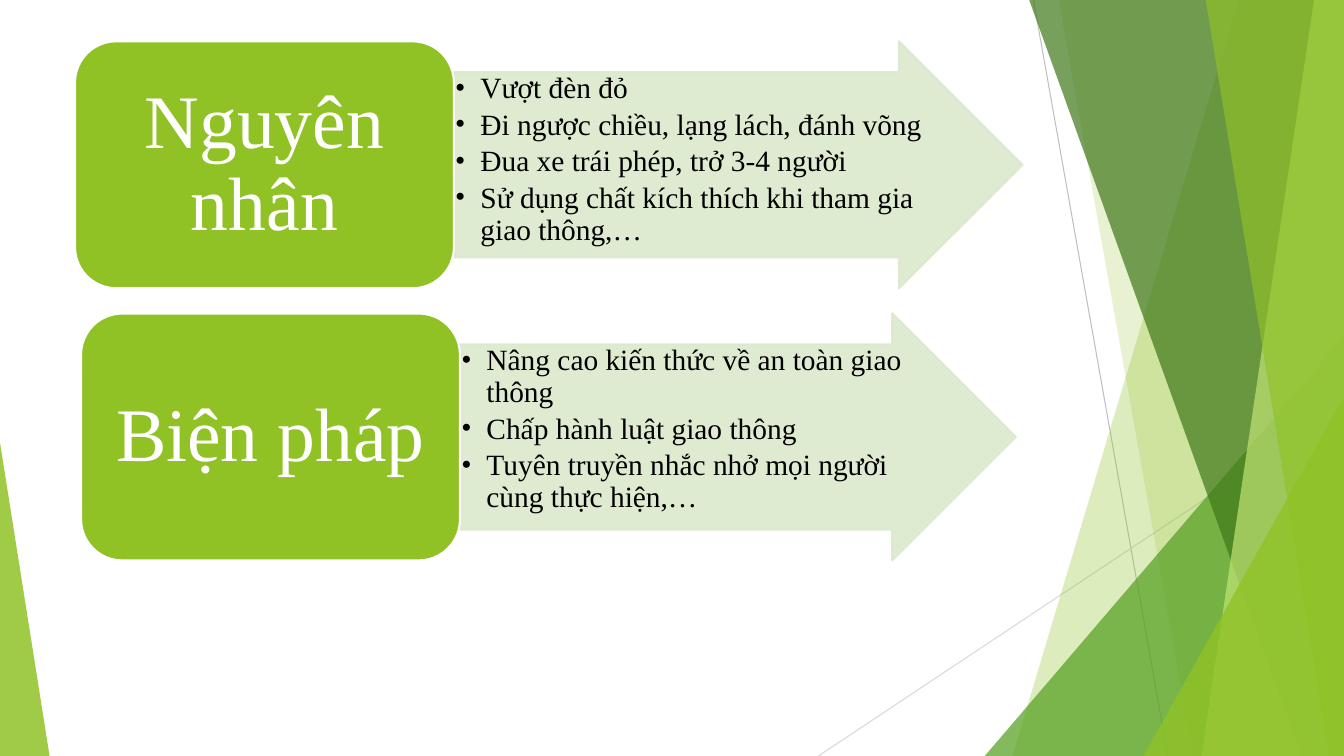
from dataclasses import dataclass

from lxml.etree import SubElement
from pptx import Presentation
from pptx.dml.color import RGBColor
from pptx.enum.shapes import MSO_CONNECTOR as Connector, MSO_SHAPE as Shape
from pptx.enum.text import MSO_ANCHOR as Anchor, PP_ALIGN as Align
from pptx.oxml.ns import qn
from pptx.util import Inches, Pt


@dataclass(frozen=True)
class Theme:
    font: str = "Times New Roman"
    heading: int = 54
    body: int = 21
    white: str = "FFFFFF"
    black: str = "000000"
    lime: str = "90C226"
    pale_lime: str = "C0E474"
    green: str = "54A021"
    dark_green: str = "3F7819"
    mint: str = "DBE9CD"
    gray: str = "BFBFBF"
    light_gray: str = "D9D9D9"


theme = Theme()
COLUMNS, ROWS = 160, 90

presentation = Presentation()
presentation.slide_width = Inches(13.33)
presentation.slide_height = Inches(7.5)
slide = presentation.slides.add_slide(presentation.slide_layouts[6])
shapes = slide.shapes
unit = presentation.slide_height / ROWS


def grid(*cells):
    return [round(cell * unit) for cell in cells]


def paint(shape, color, opacity=100, outline=None):
    shape.shadow.inherit = False
    shape.fill.solid()
    shape.fill.fore_color.rgb = RGBColor.from_string(color)
    if outline:
        shape.line.color.rgb = RGBColor.from_string(outline)
        shape.line.width = Pt(1.5)
    else:
        shape.line.fill.background()
    if opacity < 100:
        for node in shape._element.spPr.iter(qn("a:srgbClr")):
            SubElement(node, qn("a:alpha")).set("val", str(opacity * 1000))


for ends, color in [
    ((123, 0, 139, ROWS), theme.gray),
    ((COLUMNS, 48.4, 97.4, ROWS), theme.light_gray),
]:
    line = shapes.add_connector(Connector.STRAIGHT, *grid(*ends))
    line.line.color.rgb = RGBColor.from_string(color)
    line.line.width = Pt(0.75)
    SubElement(line._element.spPr, qn("a:effectLst"))

facets = [
    ("band", (147.4, 120.5), theme.lime, 30),
    ("band", (126, 142), theme.lime, 20),
    ("right corner", (117.2, 40), theme.green, 72),
    ("band", (122.5, 154.9), theme.dark_green, 70),
    ("band", (156.4, 143), theme.pale_lime, 70),
    ("band", (143.5, 158.2), theme.lime, 65),
    ("right corner", (136.1, 47.2), theme.lime, 80),
    ("left corner", (5.9, 52.7), theme.lime, 85),
]
for kind, (first, second), color, opacity in facets:
    if kind == "band":
        builder = shapes.build_freeform(*grid(first, 0), scale=1.0)
        corners = [(COLUMNS, 0), (COLUMNS, ROWS), (second, ROWS)]
        builder.add_line_segments([grid(*corner) for corner in corners], close=True)
        facet = builder.convert_to_shape()
    else:
        on_right = kind == "right corner"
        left, right = (first, COLUMNS) if on_right else (0, first)
        facet = shapes.add_shape(
            Shape.ISOSCELES_TRIANGLE, *grid(left, second, right - left, ROWS - second)
        )
        facet.adjustments[0] = 1 if on_right else 0
    paint(facet, color, opacity)

topics = [
    (8.93, 121.7, "Nguyên nhân", [
        "Vượt đèn đỏ",
        "Đi ngược chiều, lạng lách, đánh võng",
        "Đua xe trái phép, trở 3-4 người",
        "Sử dụng chất kích thích khi tham gia giao thông,…",
    ]),
    (9.65, 120.9, "Biện pháp", [
        "Nâng cao kiến thức về an toàn giao thông",
        "Chấp hành luật giao thông",
        "Tuyên truyền nhắc nhở mọi người cùng thực hiện,…",
    ]),
]
first_row, row_step, topic_height, heading_width = 4.92, 32.4, 29.4, 45.1

for row, (left, tip, heading, points) in enumerate(topics):
    top = first_row + row * row_step
    joint = left + heading_width

    arrow = shapes.add_shape(Shape.RIGHT_ARROW, *grid(joint, top, tip - joint, topic_height))
    arrow.adjustments[0], arrow.adjustments[1] = 0.75, 0.5
    paint(arrow, theme.mint, 90, theme.mint)

    box = shapes.add_shape(
        Shape.ROUNDED_RECTANGLE, *grid(left, top, heading_width, topic_height)
    )
    paint(box, theme.lime, outline=theme.white)

    for shape, lines, size, color, margins, anchor in [
        (arrow, points, theme.body, theme.black, (0.15, 0.15, 0.15, 0.15), Anchor.TOP),
        (box, [heading], theme.heading, theme.white, (2.4, 1.3, 2.4, 1.3), Anchor.MIDDLE),
    ]:
        frame = shape.text_frame
        frame.word_wrap = True
        frame.vertical_anchor = anchor
        (frame.margin_left, frame.margin_top,
         frame.margin_right, frame.margin_bottom) = grid(*margins)
        for index, text in enumerate(lines):
            paragraph = frame.add_paragraph() if index else frame.paragraphs[0]
            paragraph.line_spacing = 0.9
            paragraph.alignment = Align.CENTER
            if shape is arrow:
                paragraph.alignment = Align.LEFT
                paragraph.level = 1
                paragraph.space_after = Pt(3.4)
                properties = paragraph._p.get_or_add_pPr()
                properties.set("marL", str(Inches(0.25)))
                properties.set("indent", str(-Inches(0.25)))
                SubElement(properties, qn("a:buFont")).set("typeface", theme.font)
                SubElement(properties, qn("a:buChar")).set("char", "•")
            run = paragraph.add_run()
            run.text = text
            run.font.name = theme.font
            run.font.size = Pt(size)
            run.font.color.rgb = RGBColor.from_string(color)

presentation.save("out.pptx")
